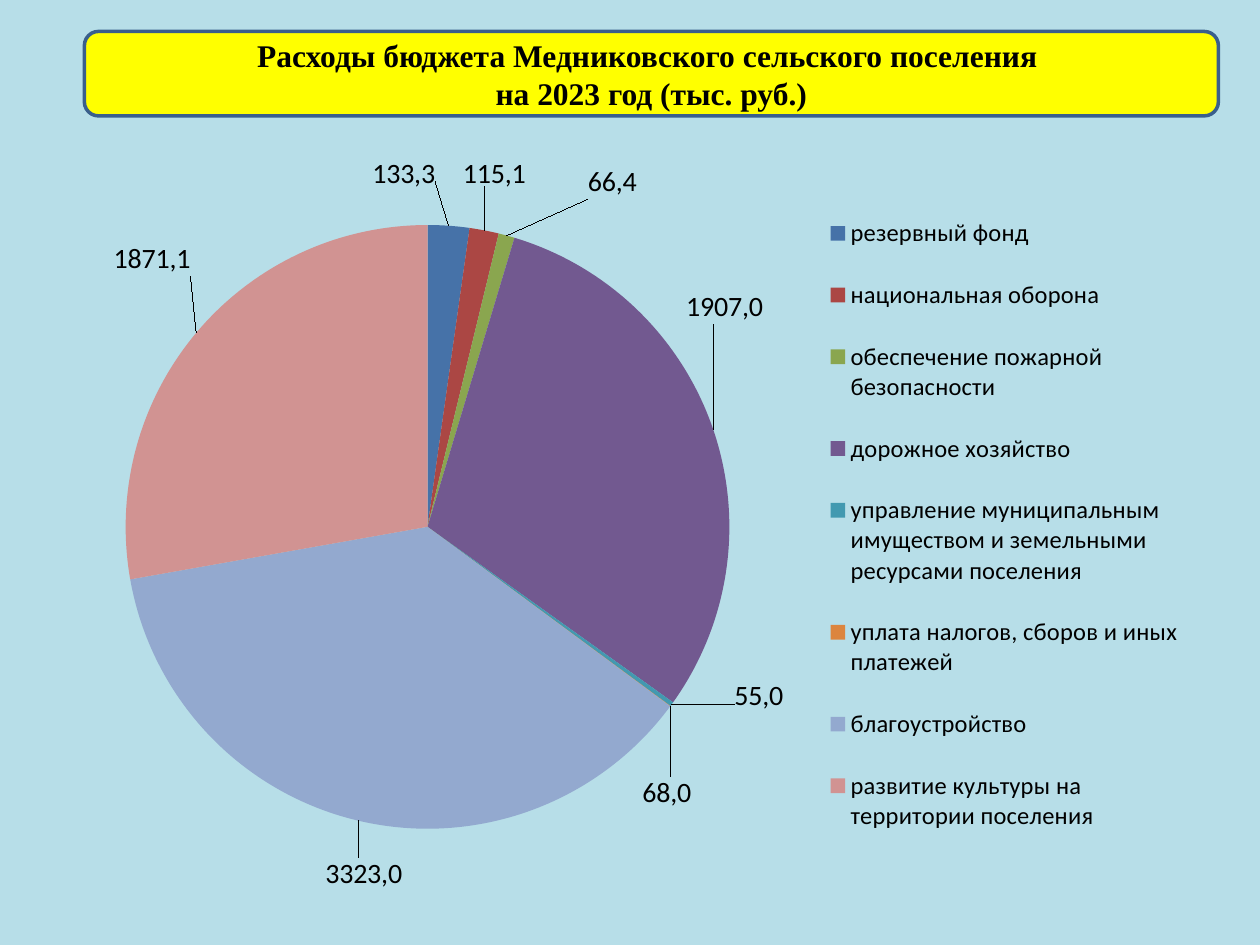
from lxml import etree
from pptx import Presentation
from pptx.chart.data import CategoryChartData
from pptx.dml.color import RGBColor
from pptx.enum.chart import XL_CHART_TYPE as ChartType
from pptx.enum.chart import XL_LABEL_POSITION as LabelPosition
from pptx.enum.chart import XL_LEGEND_POSITION as LegendPosition
from pptx.enum.shapes import MSO_SHAPE as Shape
from pptx.enum.text import MSO_ANCHOR as Anchor
from pptx.enum.text import PP_ALIGN as Align
from pptx.oxml.ns import qn
from pptx.util import Inches, Pt

COLOURS = {
    "background": "B7DEE8",
    "banner": "FFFF00",
    "border": "3A5F8C",
    "text": "000000",
}

TITLE = ["Расходы бюджета Медниковского сельского поселения ",
         "на 2023 год (тыс. руб.)"]

# Category, slice size, label, slice colour, label shift as share of the chart
EXPENSES = [
    ("резервный фонд", 113, "133,3", "4672A8", (-0.04, -0.05)),
    ("национальная оборона", 79.5, "115,1", "AB4744", (-0.02, -0.05)),
    ("обеспечение пожарной безопасности", 43.6, "66,4", "8AA64F", (0.07, -0.04)),
    ("дорожное хозяйство", 1535, "1907,0", "725990", (-0.03, -0.14)),
    ("управление муниципальным имуществом и земельными ресурсами поселения ",
     12, "55,0", "4299B0", (0.05, -0.04)),
    ("уплата налогов, сборов и иных платежей", 1, "68,0", "DC853E", (-0.03, 0.09)),
    ("благоустройство", 1883.1, "3323,0", "93A9CF", (0.04, 0.04)),
    ("развитие культуры на территории поселения ", 1411, "1871,1", "D19392",
     (0, -0.07)),
]


def colour(name):
    return RGBColor.from_string(COLOURS[name])


def place(parent, index, inner=False, **values):
    """Give a chart part a manual layout, as shares of the chart."""
    for old in parent.findall(qn("c:layout")):
        parent.remove(old)
    layout = etree.Element(qn("c:layout"))
    manual = etree.SubElement(layout, qn("c:manualLayout"))
    settings = {"layoutTarget": "inner"} if inner else {}
    if "w" in values:
        settings.update(xMode="edge", yMode="edge")
    settings.update(values)
    for tag, value in settings.items():
        etree.SubElement(manual, qn(f"c:{tag}")).set("val", str(value))
    parent.insert(index, layout)


def add_banner(page, left, top, width, height):
    box = page.shapes.add_shape(Shape.ROUNDED_RECTANGLE, left, top, width, height)
    box.shadow.inherit = False
    box.fill.solid()
    box.fill.fore_color.rgb = colour("banner")
    box.line.color.rgb = colour("border")
    box.line.width = Pt(2)
    frame = box.text_frame
    frame.word_wrap = True
    frame.vertical_anchor = Anchor.MIDDLE
    for number, line in enumerate(TITLE):
        para = frame.add_paragraph() if number else frame.paragraphs[0]
        para.alignment = Align.CENTER
        span = para.add_run()
        span.text = line
        span.font.name = "Times New Roman"
        span.font.size = Pt(18)
        span.font.bold = True
        span.font.color.rgb = colour("text")


def add_expense_pie(page, left, top, width, height):
    data = CategoryChartData(number_format="0.0")
    data.categories = [expense[0] for expense in EXPENSES]
    data.add_series("Расходы", [expense[1] for expense in EXPENSES])
    chart = page.shapes.add_chart(
        ChartType.PIE, left, top, width, height, data).chart
    chart.has_title = False
    chart.font.name = "Calibri"
    chart.font.size = Pt(10)
    chart.font.color.rgb = colour("text")

    # Legend
    chart.has_legend = True
    legend = chart.legend
    legend.position = LegendPosition.RIGHT
    legend.include_in_layout = False
    legend.font.size = Pt(14)
    legend.font.name = "Calibri"
    legend.font.color.rgb = colour("text")

    # Slices and their labels
    plot = chart.plots[0]
    plot.vary_by_categories = True
    series = plot.series[0]
    labels = series.data_labels
    labels.show_value = True
    labels.position = LabelPosition.OUTSIDE_END
    labels.font.size = Pt(16)
    for number, (_, _, text, fill, _) in enumerate(EXPENSES):
        point = series.points[number]
        point.format.fill.solid()
        point.format.fill.fore_color.rgb = RGBColor.from_string(fill)
        label = point.data_label
        span = label.text_frame.paragraphs[0].add_run()
        span.text = text
        span.font.size = Pt(16)
        span.font.name = "Calibri"
        span.font.color.rgb = colour("text")
        label.position = LabelPosition.OUTSIDE_END

    # Manual places for the pie, the legend and the labels
    root = chart.element if hasattr(chart, "element") else chart._chartSpace
    place(next(root.iter(qn("c:plotArea"))), 0, inner=True,
          x=0.055, y=0.092, w=0.533, h=0.822)
    place(next(root.iter(qn("c:legend"))), 1, x=0.67, y=0.04, w=0.32, h=0.92)
    for label, expense in zip(root.iter(qn("c:dLbl")), EXPENSES):
        shift_x, shift_y = expense[4]
        place(label, 1, x=shift_x, y=shift_y)


def main():
    deck = Presentation()
    deck.slide_width, deck.slide_height = Inches(10), Inches(7.5)
    page = deck.slides.add_slide(deck.slide_layouts[6])
    page.background.fill.solid()
    page.background.fill.fore_color.rgb = colour("background")
    add_banner(page, Inches(0.67), Inches(0.25), Inches(9), Inches(0.67))
    add_expense_pie(page, Inches(0.5), Inches(1.25), Inches(9), Inches(5.83))
    deck.save("out.pptx")


if __name__ == "__main__":
    main()
